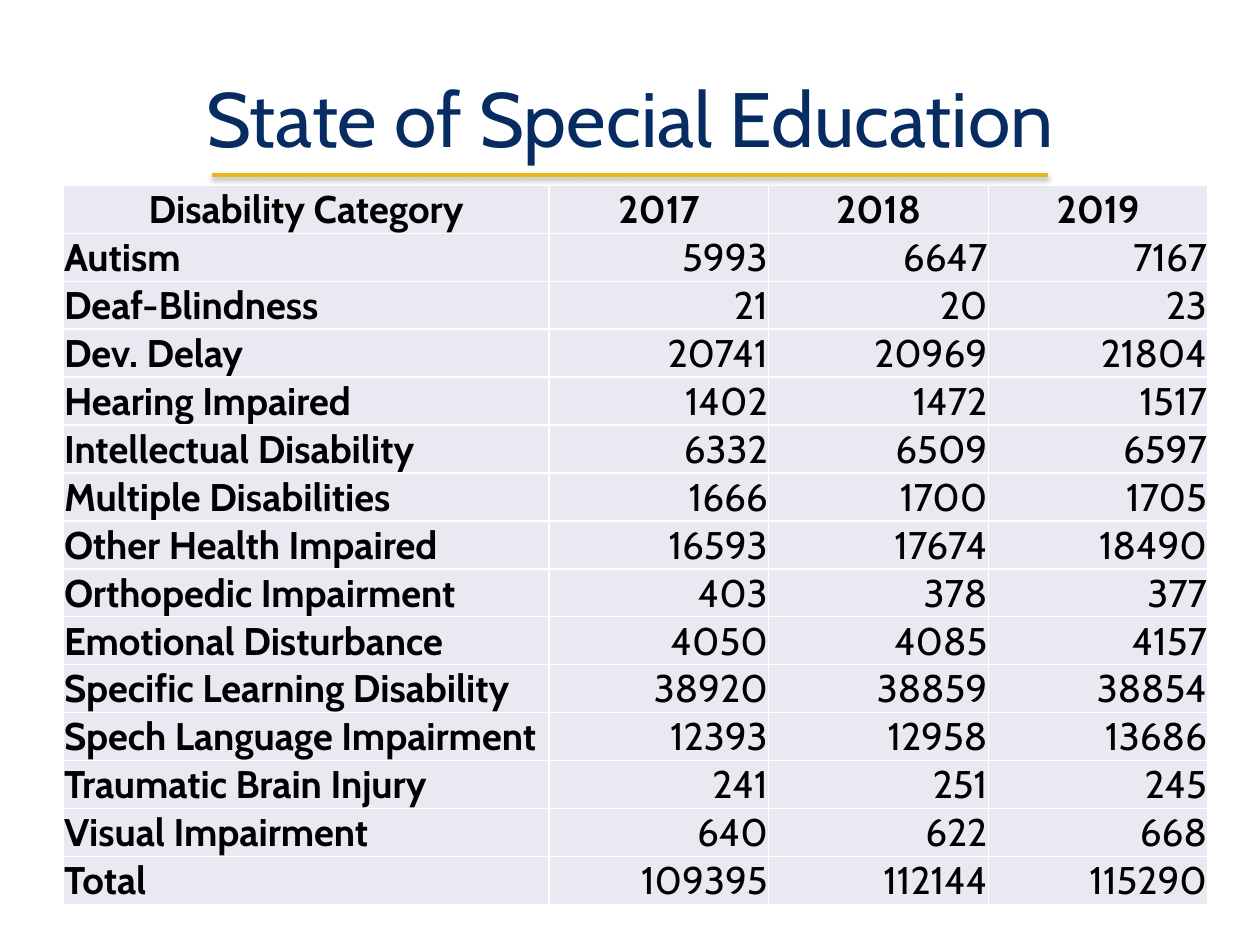
from lxml.etree import SubElement
from pptx import Presentation
from pptx.dml.color import RGBColor
from pptx.enum.shapes import MSO_CONNECTOR
from pptx.enum.text import MSO_ANCHOR, PP_ALIGN
from pptx.oxml import parse_xml
from pptx.oxml.ns import nsdecls, qn
from pptx.util import Pt

FONT = "Cabin"
NAVY = RGBColor(0x07, 0x2C, 0x62)
GOLD = RGBColor(0xE7, 0xB6, 0x17)
BLACK = RGBColor(0, 0, 0)
WHITE = RGBColor(0xFF, 0xFF, 0xFF)
PALE = RGBColor(0xE9, 0xEA, 0xF1)

HEADER = ("Disability Category", "2017", "2018", "2019")
COUNTS = [
    ("Autism", 5993, 6647, 7167),
    ("Deaf-Blindness", 21, 20, 23),
    ("Dev. Delay", 20741, 20969, 21804),
    ("Hearing Impaired", 1402, 1472, 1517),
    ("Intellectual Disability", 6332, 6509, 6597),
    ("Multiple Disabilities", 1666, 1700, 1705),
    ("Other Health Impaired", 16593, 17674, 18490),
    ("Orthopedic Impairment", 403, 378, 377),
    ("Emotional Disturbance", 4050, 4085, 4157),
    ("Specific Learning Disability", 38920, 38859, 38854),
    ("Spech Language Impairment", 12393, 12958, 13686),
    ("Traumatic Brain Injury", 241, 251, 245),
    ("Visual Impairment", 640, 622, 668),
    ("Total", 109395, 112144, 115290),
]


def write(tf, text, size=22, color=BLACK, bold=False, align=PP_ALIGN.LEFT):
    """Put one formatted paragraph in a text frame."""
    p = tf.paragraphs[0]
    p.alignment = align
    r = p.add_run()
    r.text = text
    r.font.name = FONT
    r.font.size = Pt(size)
    r.font.bold = bold
    r.font.color.rgb = color


def add_title(slide, text, left, top, width, height):
    """Place the title in its placeholder."""
    sp = slide.shapes.title
    sp.left, sp.top, sp.width, sp.height = Pt(left), Pt(top), Pt(width), Pt(height)
    sp.text_frame.vertical_anchor = MSO_ANCHOR.MIDDLE
    write(sp.text_frame, text, size=44, color=NAVY, align=PP_ALIGN.CENTER)


def add_rule(slide, left, top, width):
    """Draw the gold rule with its soft shadow."""
    line = slide.shapes.add_connector(
        MSO_CONNECTOR.STRAIGHT, Pt(left), Pt(top), Pt(left + width), Pt(top))
    line.line.color.rgb = GOLD
    line.line.width = Pt(2)
    effects = SubElement(line._element.spPr, qn("a:effectLst"))
    effects.append(parse_xml(
        f'<a:outerShdw {nsdecls("a")} blurRad="{Pt(3.1)}" dist="{Pt(1.6)}" '
        'dir="5400000" rotWithShape="0"><a:srgbClr val="000000">'
        '<a:alpha val="38000"/></a:srgbClr></a:outerShdw>'))


def add_borders(cell):
    """Give a cell thin white borders on all sides."""
    tc_pr = cell._tc.get_or_add_tcPr()
    for i, side in enumerate(("lnL", "lnR", "lnT", "lnB")):
        tc_pr.insert(i, parse_xml(
            f'<a:{side} {nsdecls("a")} w="{Pt(1)}"><a:solidFill>'
            f'<a:srgbClr val="{WHITE}"/></a:solidFill></a:{side}>'))


def add_counts(slide, left, top, width, height):
    """Place the table of counts by category and year."""
    rows = [HEADER, *COUNTS]
    year_width = 125.5
    table = slide.shapes.add_table(
        len(rows), len(HEADER), Pt(left), Pt(top), Pt(width), Pt(height)).table
    for j, column in enumerate(table.columns):
        column.width = Pt(year_width if j else width - 3 * year_width)
    for i, values in enumerate(rows):
        table.rows[i].height = Pt(height / len(rows))
        for j, value in enumerate(values):
            cell = table.cell(i, j)
            cell.margin_left = cell.margin_right = cell.margin_top = Pt(0.6)
            cell.margin_bottom = 0
            cell.vertical_anchor = MSO_ANCHOR.MIDDLE
            cell.fill.solid()
            cell.fill.fore_color.rgb = PALE
            add_borders(cell)
            if i == 0:
                align = PP_ALIGN.CENTER
            else:
                align = PP_ALIGN.RIGHT if j else PP_ALIGN.LEFT
            write(cell.text_frame, str(value), bold=i == 0 or j == 0, align=align)


def main():
    """Build the slide and save it."""
    prs = Presentation()
    prs.slide_width, prs.slide_height = Pt(720), Pt(540)
    slide = prs.slides.add_slide(prs.slide_layouts[5])
    add_rule(slide, 121, 100, 478)
    add_title(slide, "State of Special Education", 36, 21.6, 648, 90)
    add_counts(slide, 36, 106, 654.3, 411)
    prs.save("out.pptx")


if __name__ == "__main__":
    main()
